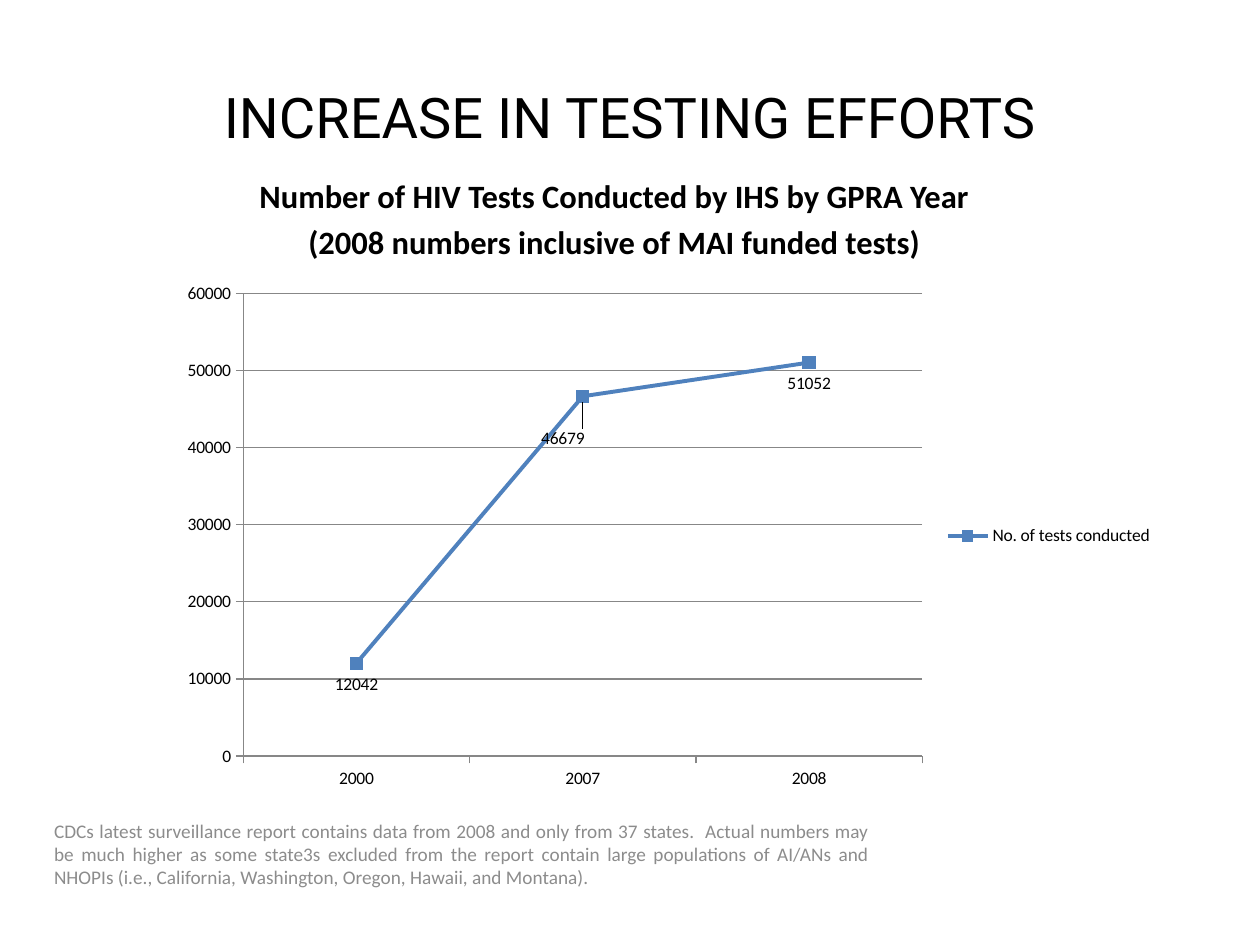
from lxml.etree import SubElement
from pptx import Presentation
from pptx.chart.data import CategoryChartData
from pptx.dml.color import RGBColor
from pptx.enum.chart import (XL_CHART_TYPE, XL_LABEL_POSITION,
                             XL_LEGEND_POSITION, XL_MARKER_STYLE, XL_TICK_MARK)
from pptx.enum.text import MSO_ANCHOR, MSO_AUTO_SIZE, PP_ALIGN
from pptx.oxml import parse_xml
from pptx.oxml.ns import nsdecls, qn
from pptx.util import Cm, Pt


def color(text):
    return RGBColor.from_string(text)


class Deck:
    """Holds the style and the current slide."""
    sans, head = "Calibri", "Roboto"
    ink, mute, grid, blue = "000000", "8C8C8C", "878787", "4F81BD"

    def __init__(self):
        self.prs = Presentation()
        self.prs.slide_width, self.prs.slide_height = Cm(25.4), Cm(19.05)
        self.slide = self.prs.slides.add_slide(self.prs.slide_layouts[1])

    def place(self, shape, box):
        shape.left, shape.top, shape.width, shape.height = map(Cm, box)

    def label(self, shape, text, size, align, anchor, face=sans, tint=ink, bold=False):
        frame = shape.text_frame
        frame.text = text
        frame.word_wrap = True
        frame.auto_size = MSO_AUTO_SIZE.NONE
        frame.vertical_anchor = anchor
        for para in frame.paragraphs:
            para.alignment = align
            for run in para.runs:
                font = run.font
                font.name, font.size, font.bold = face, Pt(size), bold
                font.color.rgb = color(tint)

    def title(self, text, box):
        shape = self.slide.shapes.title
        self.place(shape, box)
        self.label(shape, text, 32, PP_ALIGN.CENTER, MSO_ANCHOR.MIDDLE, self.head)

    def body(self, lines, box):
        shape = self.slide.placeholders[1]
        self.place(shape, box)
        self.label(shape, "\n".join(lines), 18.6, PP_ALIGN.CENTER,
                   MSO_ANCHOR.BOTTOM, bold=True)
        for para in shape.text_frame.paragraphs:
            props = para._p.get_or_add_pPr()
            props.set("marL", "0")
            props.set("indent", "0")
            SubElement(props, qn("a:buNone"))

    def note(self, text, box):
        shape = self.slide.shapes.add_textbox(*map(Cm, box))
        self.label(shape, text, 11, PP_ALIGN.JUSTIFY, MSO_ANCHOR.MIDDLE, tint=self.mute)

    def chart(self, name, cats, vals, box):
        data = CategoryChartData()
        data.categories = cats
        data.add_series(name, vals)
        chart = self.slide.shapes.add_chart(
            XL_CHART_TYPE.LINE_MARKERS, *map(Cm, box), data).chart
        chart.has_title = False
        font = chart.font
        font.name, font.size = self.sans, Pt(10)
        font.color.rgb = color(self.ink)
        chart.has_legend = True
        chart.legend.position = XL_LEGEND_POSITION.RIGHT
        chart.legend.include_in_layout = False

        # Axes
        for axis in (chart.category_axis, chart.value_axis):
            axis.major_tick_mark = XL_TICK_MARK.OUTSIDE
            axis.format.line.color.rgb = color(self.grid)
        axis.has_major_gridlines = True
        axis.major_gridlines.format.line.color.rgb = color(self.grid)
        axis.minimum_scale, axis.maximum_scale, axis.major_unit = 0, 60000, 10000

        # Line and markers
        plot = chart.plots[0]
        plot.vary_by_categories = False
        series = plot.series[0]
        series.smooth = False
        series.format.line.width = Pt(2.25)
        series.format.line.color.rgb = color(self.blue)
        mark = series.marker
        mark.style, mark.size = XL_MARKER_STYLE.SQUARE, 7
        mark.format.fill.solid()
        mark.format.fill.fore_color.rgb = color(self.blue)
        mark.format.line.color.rgb = color(self.blue)

        # Value labels
        tags = series.data_labels
        tags.show_value = True
        tags.position = XL_LABEL_POSITION.BELOW
        return series

    def nudge(self, series, index, x, y):
        """Shift one value label by a share of the chart size."""
        series.points[index].data_label.position = XL_LABEL_POSITION.BELOW
        tag = series.data_labels._element.find(qn("c:dLbl"))
        tag.find(qn("c:idx")).addnext(parse_xml(
            f'<c:layout {nsdecls("c")}><c:manualLayout>'
            f'<c:x val="{x}"/><c:y val="{y}"/></c:manualLayout></c:layout>'))


def main():
    deck = Deck()
    deck.title("INCREASE IN TESTING EFFORTS", (1.27, 0.76, 22.86, 3.18))
    deck.body(["Number of HIV Tests Conducted by IHS by GPRA Year",
               "(2008 numbers inclusive of MAI funded tests)"],
              (1.27, 3.61, 22.23, 1.78))
    tests = deck.chart("No. of tests conducted", ["2000", "2007", "2008"],
                       [12042, 46679, 51052], (3.38, 5.51, 20.12, 10.59))
    deck.nudge(tests, 1, -0.02, 0.04)
    deck.note("CDCs latest surveillance report contains data from 2008 and only "
              "from 37 states.  Actual numbers may be much higher as some state3s "
              "excluded from the report contain large populations of AI/ANs and "
              "NHOPIs (i.e., California, Washington, Oregon, Hawaii, and Montana).",
              (0.84, 16.71, 16.94, 1.02))
    deck.prs.save("out.pptx")


if __name__ == "__main__":
    main()
